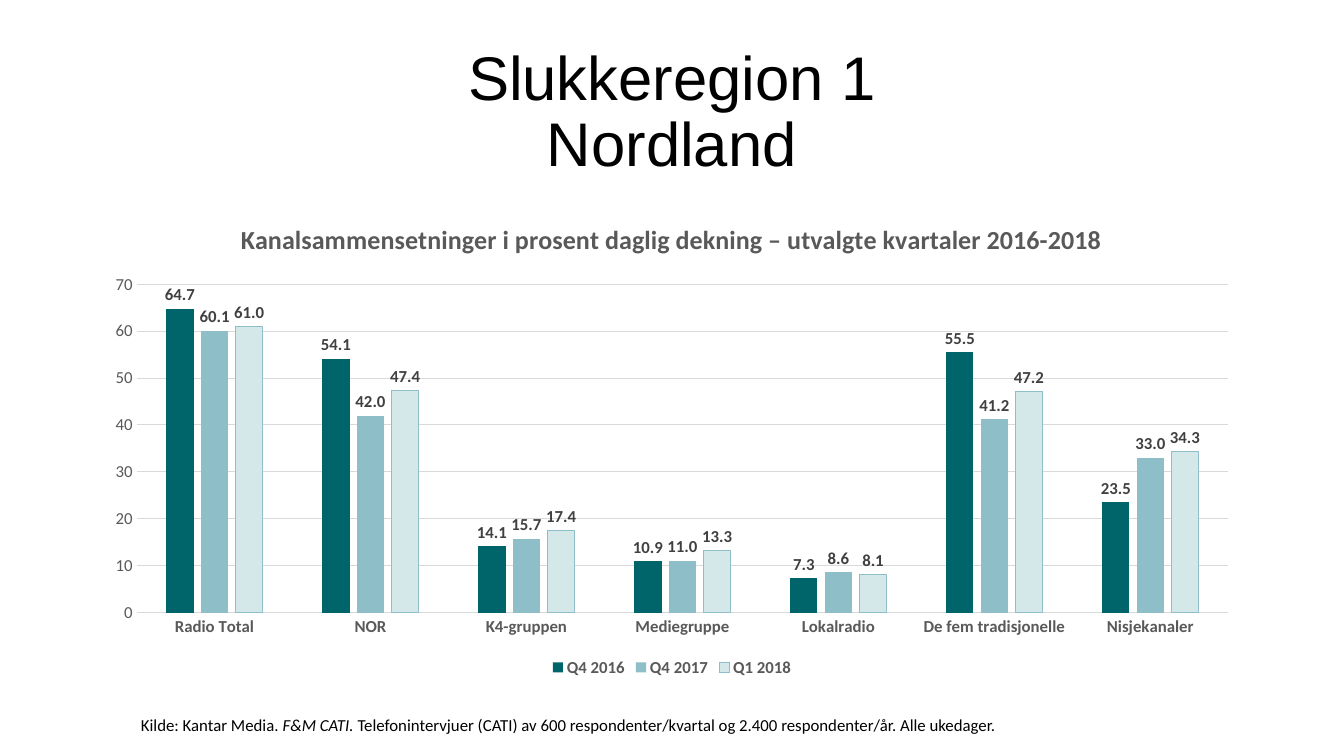
from pptx import Presentation
from pptx import util as u
from pptx.chart import data as cd
from pptx.dml.color import RGBColor
from pptx.enum import chart as ch, text as tx

BLACK = RGBColor(0x00, 0x00, 0x00)
GREY = RGBColor(0x59, 0x59, 0x59)
DARK = RGBColor(0x40, 0x40, 0x40)
RULE = RGBColor(0xD9, 0xD9, 0xD9)
TEAL = RGBColor(0x00, 0x64, 0x6B)
BLUE = RGBColor(0x8E, 0xBE, 0xC7)
PALE = RGBColor(0xD5, 0xE8, 0xE9)

CATS = ["Radio Total", "NOR", "K4-gruppen", "Mediegruppe", "Lokalradio",
        "De fem tradisjonelle", "Nisjekanaler"]
# Name, values, fill, outline
ROWS = [
    ("Q4 2016", (64.7, 54.1, 14.1, 10.9, 7.3, 55.5, 23.5), TEAL, None),
    ("Q4 2017", (60.1, 42, 15.7, 11, 8.6, 41.2, 33), BLUE, None),
    ("Q1 2018", (61, 47.4, 17.4, 13.3, 8.1, 47.2, 34.3), PALE, BLUE),
]


class Deck:
    head = "Arial"
    body = "Calibri"

    def __init__(self, wide, high):
        self.prs = Presentation()
        self.prs.slide_width = u.Pt(wide)
        self.prs.slide_height = u.Pt(high)
        self.slide = self.prs.slides.add_slide(self.prs.slide_layouts[5])

    def style(self, font, size, color, bold=False, name=None):
        font.name = name or self.body
        font.size = u.Pt(size)
        font.bold = bold
        font.color.rgb = color

    def title(self, box, lines):
        shape = self.slide.shapes.title
        shape.left, shape.top, shape.width, shape.height = map(u.Pt, box)
        frame = shape.text_frame
        frame.word_wrap = True
        frame.auto_size = tx.MSO_AUTO_SIZE.NONE
        frame.vertical_anchor = tx.MSO_ANCHOR.MIDDLE
        para = frame.paragraphs[0]
        para.alignment = tx.PP_ALIGN.CENTER
        para.line_spacing = 0.9
        for i, line in enumerate(lines):
            if i:
                para.add_line_break()
            run = para.add_run()
            run.text = line
            self.style(run.font, 44, BLACK, name=self.head)

    def text(self, box, runs):
        frame = self.slide.shapes.add_textbox(*map(u.Pt, box)).text_frame
        frame.word_wrap = True
        frame.auto_size = tx.MSO_AUTO_SIZE.SHAPE_TO_FIT_TEXT
        para = frame.paragraphs[0]
        for words, slant in runs:
            run = para.add_run()
            run.text = words
            self.style(run.font, 12, BLACK)
            run.font.italic = slant

    def chart(self, box, name, cats, rows):
        data = cd.CategoryChartData(number_format="0.0")
        data.categories = cats
        for label, vals, _, _ in rows:
            data.add_series(label, vals)
        chart = self.slide.shapes.add_chart(
            ch.XL_CHART_TYPE.COLUMN_CLUSTERED, *map(u.Pt, box), data).chart
        self.style(chart.font, 10, BLACK)

        # Chart title and legend
        chart.has_title = True
        run = chart.chart_title.text_frame.paragraphs[0].add_run()
        run.text = name
        self.style(run.font, 18.6, GREY, True)
        chart.chart_title.include_in_layout = False
        chart.has_legend = True
        chart.legend.position = ch.XL_LEGEND_POSITION.BOTTOM
        chart.legend.include_in_layout = False
        self.style(chart.legend.font, 12, GREY, True)

        # Axes
        for axis, bold in ((chart.category_axis, True), (chart.value_axis, False)):
            axis.major_tick_mark = axis.minor_tick_mark = ch.XL_TICK_MARK.NONE
            self.style(axis.tick_labels.font, 12, GREY, bold)
        self.line(chart.category_axis.format.line, RULE)
        axis = chart.value_axis
        axis.format.line.fill.background()
        axis.minimum_scale, axis.maximum_scale, axis.major_unit = 0, 70, 10
        axis.tick_labels.number_format = "0"
        axis.tick_labels.number_format_is_linked = False
        self.line(axis.major_gridlines.format.line, RULE)

        # Columns and their values
        plot = chart.plots[0]
        plot.gap_width = 219
        plot.overlap = -27
        plot.vary_by_categories = False
        for ser, (_, _, fill, edge) in zip(plot.series, rows):
            ser.invert_if_negative = False
            ser.format.fill.solid()
            ser.format.fill.fore_color.rgb = fill
            if edge:
                self.line(ser.format.line, edge)
            else:
                ser.format.line.fill.background()
            tags = ser.data_labels
            tags.show_value = True
            tags.position = ch.XL_LABEL_POSITION.OUTSIDE_END
            tags.number_format = "0.0"
            tags.number_format_is_linked = False
            self.style(tags.font, 12, DARK, True)

    def line(self, line, color):
        line.color.rgb = color
        line.width = u.Pt(0.75)


def main():
    deck = Deck(960, 540)
    deck.title((66, 28.75, 828, 104.4), ["Slukkeregion 1", "Nordland"])
    deck.chart((66, 144, 828, 342.7),
               "Kanalsammensetninger i prosent daglig dekning – "
               "utvalgte kvartaler 2016-2018", CATS, ROWS)
    # Source line
    deck.text((93.6, 506.9, 808.6, 21.8), [
        ("Kilde: Kantar Media. ", False),
        ("F&M CATI. ", True),
        ("Telefonintervjuer (CATI) av 600 respondenter/kvartal og "
         "2.400 respondenter/år. Alle ukedager.", False),
    ])
    deck.prs.save("out.pptx")


if __name__ == "__main__":
    main()
